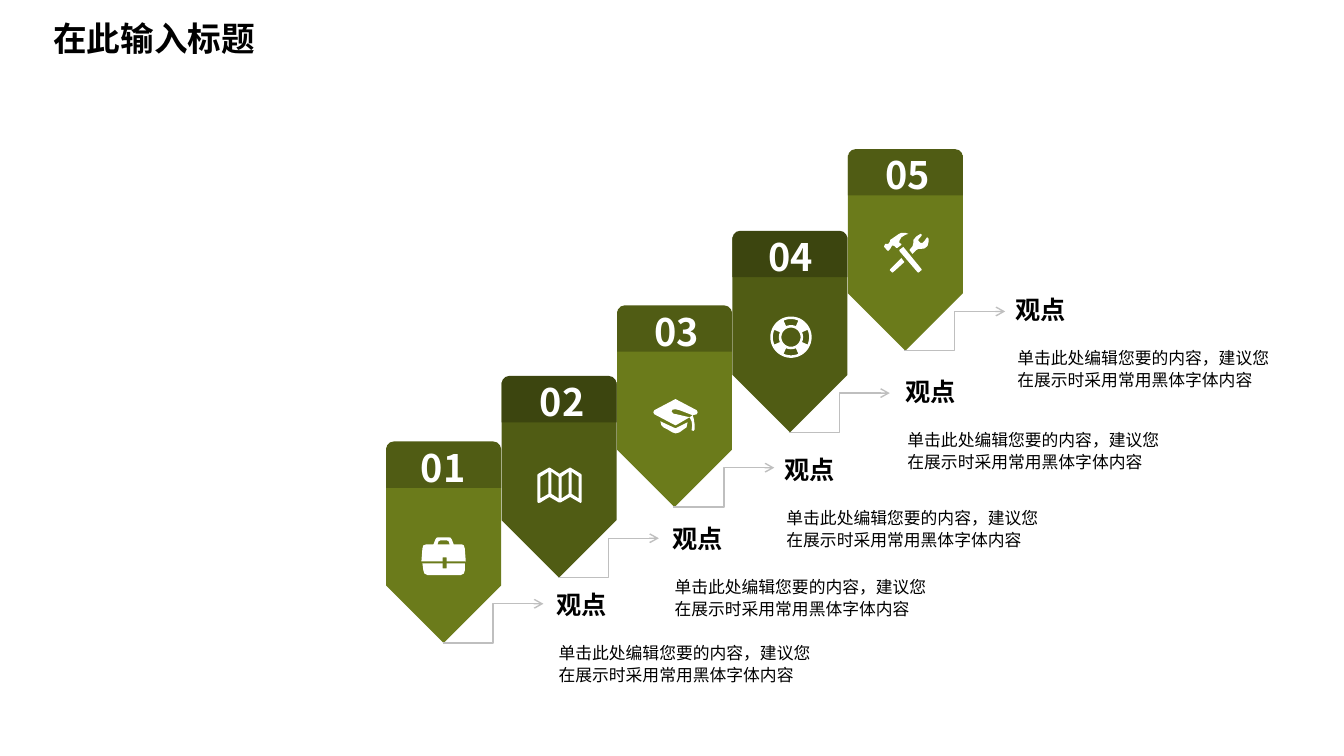
from math import cos, sin, radians
from lxml.etree import SubElement
from pptx import Presentation
from pptx.dml.color import RGBColor
from pptx.enum.shapes import MSO_CONNECTOR as Connector, MSO_SHAPE as Preset
from pptx.enum.text import MSO_AUTO_SIZE as AutoSize, PP_ALIGN as Align
from pptx.oxml.ns import qn
from pptx.util import Inches, Pt

COLORS = {"olive": "6B7B1B", "moss": "505C14", "forest": "3C450F",
          "white": "FFFFFF", "black": "000000", "arrow": "BFBFBF"}
FONT = "Noto Sans CJK SC"
TITLE = "在此输入标题"
HEADING = "观点"
DETAIL = "单击此处编辑您要的内容，建议您在展示时采用常用黑体字体内容"

BRIEFCASE = [
    [(21, 20), (25, 20), (25, 24), (44, 24), (43, 11), (42, 8), (40, 7), (32, 7),
     (30, 2), (29, 0.5), (27, 0), (17, 0), (15, 0.5), (14, 2), (12, 7), (5, 7),
     (2, 8), (1, 11), (0, 24), (21, 24)],
    [(16, 7), (17, 4), (19, 3), (25, 3), (27, 4), (28, 7)],
    [(25, 31), (21, 31), (21, 26), (1, 26), (2, 33), (3, 36), (6, 37.5),
     (39, 37.5), (42, 36), (43, 33), (43, 26), (25, 26)],
]
MAP = [
    [(0, 7), (1, 6), (11.5, 0), (12.5, 0), (22, 6), (32, 0), (33, 0), (43, 6),
     (44, 7), (44, 34), (43, 35), (42, 34.5), (32.5, 29), (23, 34.5), (21.5, 34.5),
     (12, 29), (3, 34.5), (1, 35), (0, 34)],
    [(11, 26), (3, 30.5), (3, 9), (11, 4)],
    [(21, 30.5), (14, 26), (14, 4), (21, 9)],
    [(31, 26), (24, 30.5), (24, 9), (31, 4)],
    [(41, 30.5), (34, 26), (34, 4), (41, 9)],
]
GRADUATION_CAP = [
    [(7, 22), (8, 26), (10, 28), (14, 30), (19, 33), (22, 34), (26, 33), (30, 30),
     (33, 28), (34, 23), (22, 29)],
    [(43, 11), (24, 1), (22, 0), (20, 1), (1, 11), (0, 13), (1, 15), (20, 25),
     (22, 26), (24, 25), (36, 18), (23, 15), (20, 14.5), (18, 12.5), (19, 10.5),
     (22, 10), (26, 11), (39, 16), (43, 15), (44, 13)],
    [(38, 31), (40, 31.5), (41, 30), (41, 25), (40, 19), (39, 16), (36, 18),
     (38, 22), (38.5, 26)],
]
TOOLS = [
    [(7, 14), (8, 12.5), (10, 13), (12, 15), (13, 15), (17, 12), (17, 11), (15, 10),
     (15, 8), (17, 4.5), (21, 2), (24, 1), (21, 0), (17, 0), (14, 1.5), (9, 5),
     (6, 7), (5.5, 9), (4, 11), (1, 11), (0, 13), (0, 14), (3, 17.5), (4, 18),
     (6, 16), (6.5, 15)],
    [(19, 14), (15, 17), (15, 18), (33, 39), (34, 39.5), (37, 37), (37, 36)],
    [(44, 6), (43, 4.5), (42, 5), (40, 8), (38, 10), (36, 10), (34, 8), (34, 6.5),
     (37, 3), (37, 1.5), (36, 1), (32, 3.5), (29, 7), (29, 10), (28, 13.5),
     (25, 17), (28, 21), (32, 17), (34, 16), (36, 16), (40, 15.5), (43, 13), (44, 9)],
    [(6, 36), (5.5, 37), (8, 39.5), (9, 39), (20, 29), (17, 25)],
]


def arc(radius, start, end, step=6):
    return [(20.5 + radius * cos(radians(angle)), 20.5 + radius * sin(radians(angle)))
            for angle in range(start, end, step)]


LIFEBUOY = [arc(20.5, 0, 360), arc(9.5, 0, 360)] + [
    arc(18, middle - 24, middle + 25) + arc(12, middle - 24, middle + 25)[::-1]
    for middle in range(0, 360, 90)]

STEPS = [
    {"top": 4.38, "number": 4.06, "text": (5.4, 5.79), "icon": BRIEFCASE, "icon_at": (4.18, 5.33)},
    {"top": 3.73, "number": 5.24, "text": (6.55, 5.13), "icon": MAP, "icon_at": (5.33, 4.64)},
    {"top": 3.03, "number": 6.38, "text": (7.66, 4.45), "icon": GRADUATION_CAP, "icon_at": (6.48, 3.96)},
    {"top": 2.29, "number": 7.51, "text": (8.86, 3.67), "icon": LIFEBUOY, "icon_at": (7.64, 3.14)},
    {"top": 1.48, "number": 8.67, "text": (9.95, 2.86), "icon": TOOLS, "icon_at": (8.77, 2.31)},
]
BANNER_LEFT, BANNER_STEP, BANNER_WIDTH = 3.83, 1.145, 1.14
CAP_HEIGHT, BODY_LENGTH, TIP_DROP = 0.46, 1.94, 2.0
ARROW_RUN, ARROW_RISE = 1.0, 0.39
SCHEMES = [("olive", "moss"), ("moss", "forest")]
FORMATS = {
    "title": {"size": Pt(24), "bold": True, "color": "black"},
    "number": {"size": Pt(27), "bold": True, "color": "white"},
    "heading": {"size": Pt(18), "bold": True, "color": "black"},
    "detail": {"size": Pt(12), "bold": False, "color": "black"},
}


def rgb(name):
    return RGBColor.from_string(COLORS[name])


def paint(shape, color):
    shape.shadow.inherit = False
    shape.fill.solid()
    shape.fill.fore_color.rgb = rgb(color)
    shape.line.fill.background()


def add_preset(shapes, preset, box, color, rotation=0):
    shape = shapes.add_shape(preset, *map(Inches, box))
    shape.rotation = rotation
    paint(shape, color)


def add_icon(shapes, contours, left, top):
    outlines = [[(Inches(x / 100), Inches(y / 100)) for x, y in points] for points in contours]
    builder = shapes.build_freeform(*outlines[0][0])
    for index, points in enumerate(outlines):
        if index:
            builder.move_to(*points[0])
        builder.add_line_segments(points[1:], close=True)
    paint(builder.convert_to_shape(Inches(left), Inches(top)), "white")


def add_text(shapes, text, box, style, wrap=True, margins=(0.1, 0.05), align=Align.LEFT, spacing=1.0):
    frame = shapes.add_textbox(*map(Inches, box)).text_frame
    frame.word_wrap = wrap
    frame.auto_size = AutoSize.SHAPE_TO_FIT_TEXT
    frame.margin_left = frame.margin_right = Inches(margins[0])
    frame.margin_top = frame.margin_bottom = Inches(margins[1])
    paragraph = frame.paragraphs[0]
    paragraph.alignment = align
    paragraph.line_spacing = spacing
    run = paragraph.add_run()
    run.text = text
    for name, value in FORMATS[style].items():
        if name == "color":
            run.font.color.rgb = rgb(value)
        else:
            setattr(run.font, name, value)
    run.font.name = FONT
    SubElement(run._r.get_or_add_rPr(), qn("a:ea")).set("typeface", FONT)


def add_arrow(shapes, left, bottom):
    ends = (left, bottom, left + ARROW_RUN, bottom - ARROW_RISE)
    arrow = shapes.add_connector(Connector.ELBOW, *map(Inches, ends))
    arrow.line.color.rgb = rgb("arrow")
    arrow.line.width = Pt(1)
    SubElement(arrow.line._get_or_add_ln(), qn("a:tailEnd")).set("type", "arrow")
    SubElement(arrow._element.spPr, qn("a:effectLst"))


def main():
    presentation = Presentation()
    presentation.slide_width, presentation.slide_height = Inches(13.33), Inches(7.5)
    shapes = presentation.slides.add_slide(presentation.slide_layouts[6]).shapes
    for index, step in enumerate(STEPS):
        left, top = BANNER_LEFT + index * BANNER_STEP, step["top"]
        center = left + BANNER_WIDTH / 2
        body_color, cap_color = SCHEMES[index % 2]
        banner = shapes.add_group_shape().shapes
        add_preset(banner, Preset.PENTAGON,
                   (center - BODY_LENGTH / 2, top + CAP_HEIGHT, BODY_LENGTH, BANNER_WIDTH),
                   body_color, 90)
        add_preset(banner, Preset.ROUND_2_SAME_RECTANGLE,
                   (left, top, BANNER_WIDTH, CAP_HEIGHT), cap_color)
        add_text(shapes, f"{index + 1:02}", (step["number"], top - 0.02, 0.67, 0.56),
                 "number", wrap=False, align=Align.CENTER)
        add_icon(shapes, step["icon"], *step["icon_at"])
        text_left, text_top = step["text"]
        add_text(shapes, HEADING, (text_left, text_top, 0.75, 0.42), "heading",
                 wrap=False, margins=(0.12, 0.06))
        add_text(shapes, DETAIL, (text_left + 0.02, text_top + 0.51, 2.8, 0.57), "detail",
                 margins=(0.12, 0.06), spacing=1.1)
        add_arrow(shapes, center - 0.01, top + TIP_DROP)
    add_text(shapes, TITLE, (0.43, 0.13, 2.61, 0.5), "title")
    presentation.save("out.pptx")


if __name__ == "__main__":
    main()
